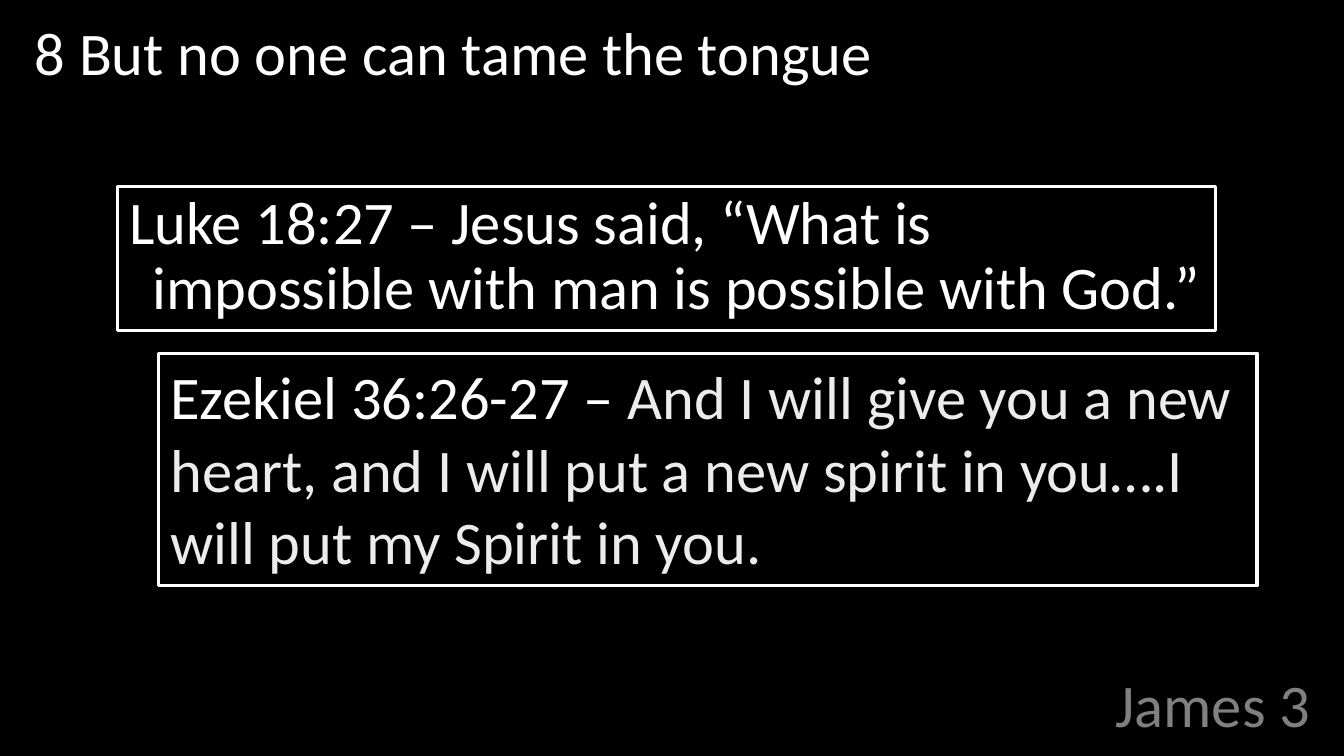
import pptx
import pptx.util
import pptx.dml.color
import pptx.enum.shapes
import pptx.enum.text

Inches = pptx.util.Inches
RGBColor = pptx.dml.color.RGBColor
PP_ALIGN = pptx.enum.text.PP_ALIGN
MSO_ANCHOR = pptx.enum.text.MSO_ANCHOR

BLACK = RGBColor(0x00, 0x00, 0x00)
WHITE = RGBColor(0xFF, 0xFF, 0xFF)
PALE = RGBColor(0xEC, 0xEC, 0xEC)
GRAY = RGBColor(0x80, 0x80, 0x80)


def write(sp, parts, spacing, hanging=0, align=PP_ALIGN.LEFT, anchor=MSO_ANCHOR.TOP):
    """Fill a shape with one paragraph of (text, colour) parts."""
    tf = sp.text_frame
    tf.word_wrap = True
    tf.auto_size = pptx.enum.text.MSO_AUTO_SIZE.NONE
    tf.vertical_anchor = anchor
    p = tf.paragraphs[0]
    p.alignment = align
    p.line_spacing = spacing
    pPr = p._p.get_or_add_pPr()
    pPr.set("marL", str(Inches(hanging)))
    pPr.set("indent", str(-Inches(hanging)))
    for text, color in parts:
        r = p.add_run()
        r.text = text
        r.font.name = "Calibri"
        r.font.size = pptx.util.Pt(36)
        r.font.bold = False
        r.font.color.rgb = color


prs = pptx.Presentation()
prs.slide_width = Inches(11.11)
prs.slide_height = Inches(6.25)
s = prs.slides.add_slide(prs.slide_layouts[5])
s.background.fill.solid()
s.background.fill.fore_color.rgb = BLACK

# Chapter title, bottom right
title = s.shapes.title
title.left, title.top = Inches(7.06), Inches(5.56)
title.width, title.height = Inches(3.87), Inches(0.6)
write(title, [("James 3", GRAY)], 0.8, align=PP_ALIGN.RIGHT, anchor=MSO_ANCHOR.BOTTOM)

# Verse being studied
verse = s.shapes.add_textbox(Inches(0.19), Inches(0.12), Inches(10.74), Inches(5.29))
write(verse, [("8 But no one can tame the tongue", WHITE)], 0.95, hanging=0.38)

# Framed cross-references: left, top, height, line spacing, hanging indent, text
quotes = [
    (0.97, 1.54, 1.19, 0.9, 0.19,
     [("Luke 18:27 – Jesus said, “What is impossible with man is possible with God.”", WHITE)]),
    (1.31, 2.92, 1.92, 1.0, 0,
     [("Ezekiel 36:26-27 – ", WHITE),
      ("And I will give you a new heart, and I will put a new spirit in you….I will put "
       "my Spirit in you.", PALE)]),
]
for left, top, height, spacing, hanging, parts in quotes:
    sp = s.shapes.add_shape(pptx.enum.shapes.MSO_SHAPE.ROUNDED_RECTANGLE,
                            Inches(left), Inches(top), Inches(9.08), Inches(height))
    sp.adjustments[0] = 0
    sp.shadow.inherit = False
    sp.fill.solid()
    sp.fill.fore_color.rgb = BLACK
    sp.line.color.rgb = WHITE
    sp.line.width = pptx.util.Pt(2)
    write(sp, parts, spacing, hanging)

prs.save("out.pptx")
